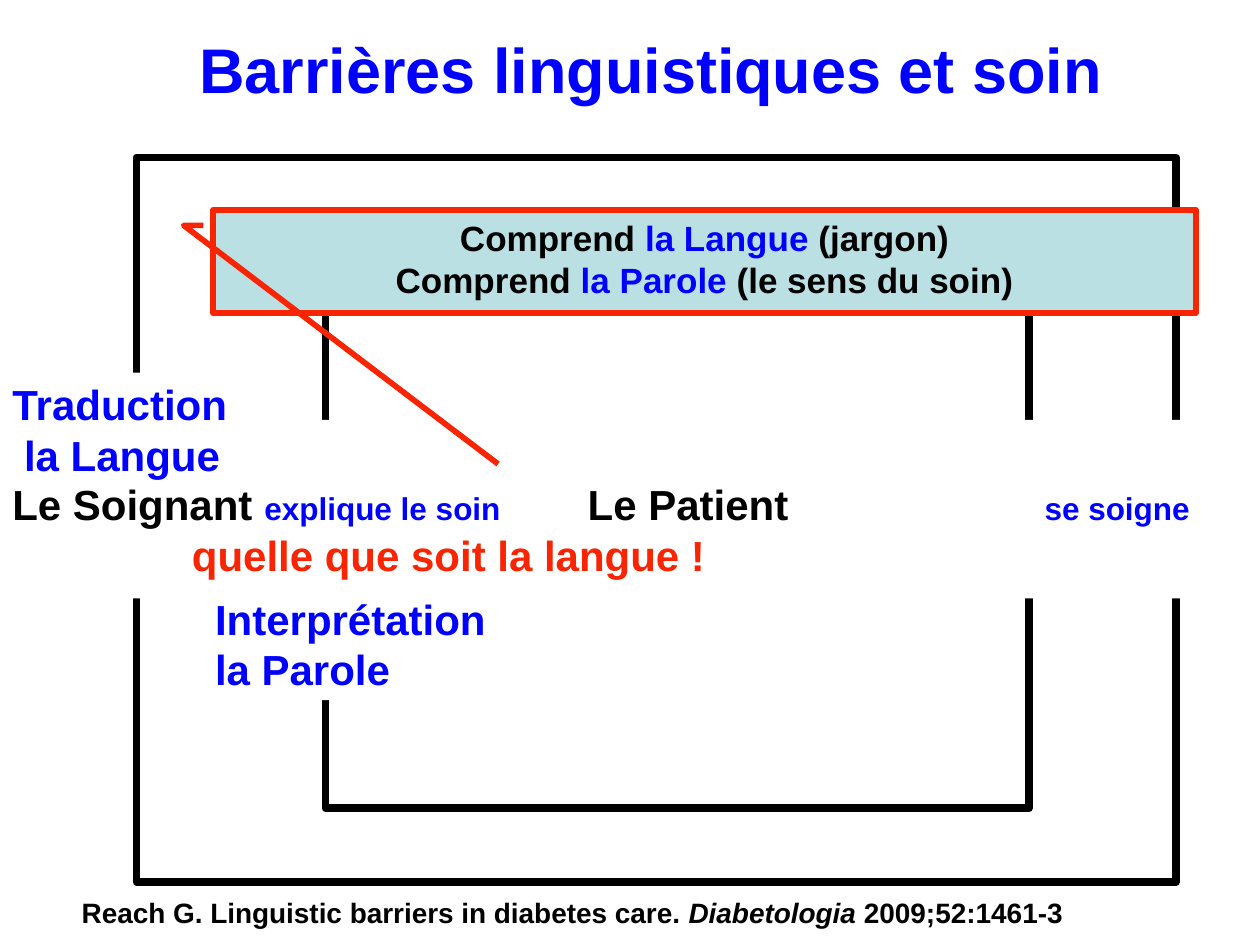
from lxml import etree
from pptx import Presentation
from pptx.dml.color import RGBColor
from pptx.enum import shapes, text
from pptx.oxml.ns import qn
from pptx.util import Inches, Pt

BLACK, WHITE, BLUE, RED, PALE = "000000", "FFFFFF", "0000FF", "F92401", "BBE0E3"
CELL = Inches(1) / 12  # grid of 120 columns by 90 rows


def colour(value):
    return RGBColor.from_string(value)


class SlideBuilder:
    """Holds the text style, the grid and the current page."""

    font = "Arial"

    def __init__(self, page):
        self.page = page

    def grid(self, *cells):
        return [round(cell * CELL) for cell in cells]

    def add_lines(self, box, lines, align=text.PP_ALIGN.LEFT,
                  anchor=text.MSO_ANCHOR.TOP):
        """Each line is a list of (words, size, colour[, italic]) spans."""
        frame = box.text_frame
        frame.word_wrap = True
        frame.vertical_anchor = anchor
        for index, line in enumerate(lines):
            para = frame.add_paragraph() if index else frame.paragraphs[0]
            para.alignment = align
            for words, size, tint, *italic in line:
                span = para.add_run()
                span.text = words
                span.font.name = self.font
                span.font.size = Pt(size)
                span.font.bold = True
                span.font.italic = bool(italic)
                span.font.color.rgb = colour(tint)
        return frame

    def title(self, place, words):
        box = self.page.shapes.title
        box.left, box.top, box.width, box.height = self.grid(*place)
        self.add_lines(box, [[(words, 36, BLUE)]], text.PP_ALIGN.CENTER,
                       text.MSO_ANCHOR.MIDDLE)

    def shape(self, place, fill=None, line=None, width=4.5,
              kind=shapes.MSO_SHAPE.RECTANGLE):
        box = self.page.shapes.add_shape(kind, *self.grid(*place))
        box.shadow.inherit = False
        if fill:
            box.fill.solid()
            box.fill.fore_color.rgb = colour(fill)
        else:
            box.fill.background()
        if line:
            box.line.color.rgb = colour(line)
            box.line.width = Pt(width)
        else:
            box.line.fill.background()
        return box

    def label(self, place, lines):
        return self.add_lines(self.shape(place, WHITE), lines)

    def text_box(self, place, lines):
        box = self.page.shapes.add_textbox(*self.grid(*place))
        return self.add_lines(box, lines)

    def callout(self, place, adjustments, lines):
        box = self.shape(place, PALE, RED, 3.25, shapes.MSO_SHAPE.LINE_CALLOUT_2)
        for index, value in enumerate(adjustments):
            box.adjustments[index] = value
        self.add_lines(box, lines, text.PP_ALIGN.CENTER)

    def tab_stops(self, para, columns):
        stops = etree.SubElement(para._p.get_or_add_pPr(), qn("a:tabLst"))
        for position in self.grid(*columns):
            etree.SubElement(stops, qn("a:tab"), pos=str(position), algn="l")


def main():
    deck = Presentation()
    deck.slide_width, deck.slide_height = Inches(10), Inches(7.5)
    slide = SlideBuilder(deck.slides.add_slide(deck.slide_layouts[5]))

    slide.title((4, 0, 116, 13), "Barrières linguistiques et soin")

    # Nested loops, opened by a white band
    slide.shape((31, 23, 67, 54), WHITE, BLACK)
    slide.shape((13, 15, 99, 69), line=BLACK)
    slide.shape((7, 40, 110, 17), WHITE)

    # Path of care across the band
    care = slide.text_box((0, 45, 120, 10.8), [
        [("Le Soignant ", 24, BLACK), ("explique le soin", 18, BLUE),
         ("\tLe Patient", 24, BLACK), ("\tse soigne", 18, BLUE)],
        [("\tquelle que soit la langue !", 24, RED)],
    ])
    slide.tab_stops(care.paragraphs[0], (54.8, 98.3))
    slide.tab_stops(care.paragraphs[1], (17.1,))

    # What the patient understands
    slide.callout((20.3, 20, 93.6, 9.8), (0.15, -0.01, 0.15, -0.03, 2.47, 0.29), [
        [("Comprend ", 20, BLACK), (topic, 20, BLUE), (detail, 20, BLACK)]
        for topic, detail in (("la Langue", " (jargon)"),
                              ("la Parole", " (le sens du soin)"))
    ])

    # Barriers on each loop
    slide.label((0, 35.5, 25.1, 10.8),
                [[("Traduction", 24, BLUE)], [(" la Langue", 24, BLUE)]])
    slide.label((19.3, 55.9, 35.9, 10.8),
                [[("Interprétation", 24, BLUE)], [("la Parole", 24, BLUE)]])

    # Reference
    slide.text_box((6.6, 84.7, 113, 4.4), [[
        ("Reach G. Linguistic barriers in diabetes care. ", 16, BLACK),
        ("Diabetologia", 16, BLACK, True),
        (" 2009;52:1461-3", 16, BLACK),
    ]])

    deck.save("out.pptx")


if __name__ == "__main__":
    main()
